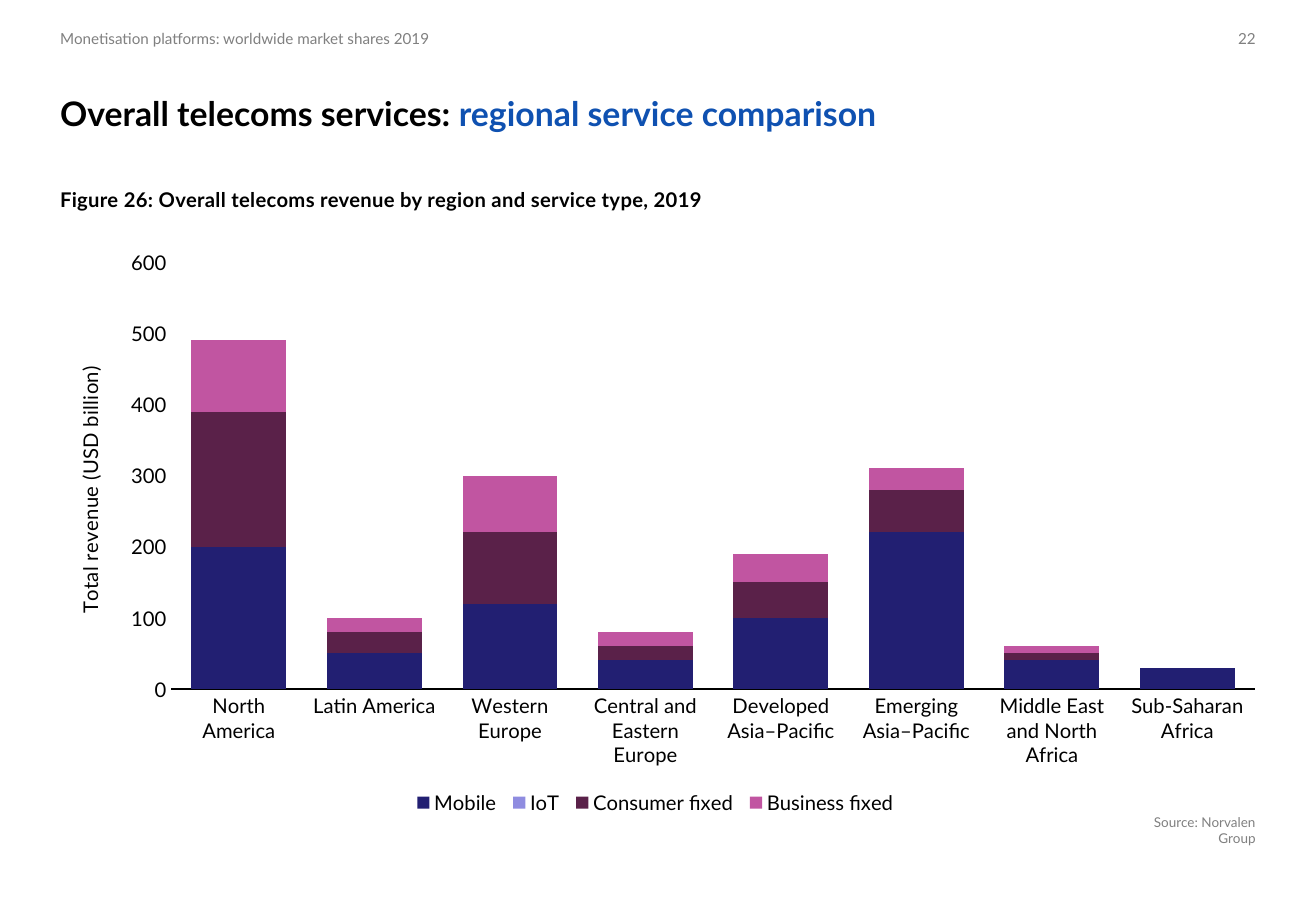
from lxml.etree import SubElement
from pptx import Presentation
from pptx.chart.data import CategoryChartData
from pptx.dml.color import RGBColor
from pptx.enum.chart import XL_CHART_TYPE, XL_LEGEND_POSITION, XL_TICK_MARK
from pptx.enum.text import MSO_ANCHOR, MSO_AUTO_SIZE, PP_ALIGN
from pptx.oxml import parse_xml
from pptx.oxml.ns import nsdecls, qn
from pptx.util import Pt

COLORS = {
    "black": "000000",
    "blue": "0F51B1",
    "grey": "808080",
    "Mobile": "221F72",
    "IoT": "8F8CE0",
    "Consumer fixed": "5A2149",
    "Business fixed": "C155A1",
}
REVENUE = {
    "Mobile": (200, 50, 120, 40, 100, 220, 40, 30),
    "IoT": (0, 0, 0, 0, 0, 0, 0, 0),
    "Consumer fixed": (190, 30, 100, 20, 50, 60, 10, 0),
    "Business fixed": (100, 20, 80, 20, 40, 30, 10, 0),
}
REGIONS = [
    "North America",
    "Latin America",
    "Western Europe",
    "Central and Eastern Europe",
    "Developed\nAsia–Pacific",
    "Emerging\nAsia–Pacific",
    "Middle East and North Africa",
    "Sub-Saharan Africa",
]


def format_font(font, size, color="black", bold=False):
    for name, value in {"name": "Lato", "size": Pt(size), "bold": bold}.items():
        setattr(font, name, value)
    font.color.rgb = RGBColor.from_string(COLORS[color])


def fill_box(box, spans, size, bold=False, align=PP_ALIGN.LEFT,
             anchor=MSO_ANCHOR.MIDDLE, inset=3.6, wrap=True):
    frame = box.text_frame
    settings = {
        "margin_left": 0, "margin_right": 0,
        "margin_top": Pt(inset), "margin_bottom": Pt(inset),
        "word_wrap": wrap, "auto_size": MSO_AUTO_SIZE.NONE,
        "vertical_anchor": anchor,
    }
    for name, value in settings.items():
        setattr(frame, name, value)
    para = frame.paragraphs[0]
    para.alignment = align
    for text, color in spans:
        span = para.add_run()
        span.text = text
        format_font(span.font, size, color, bold)
    return para


deck = Presentation()
deck.slide_width, deck.slide_height = Pt(780), Pt(540)
page = deck.slides.add_slide(deck.slide_layouts[5])

title = page.shapes.title
title.left, title.top, title.width, title.height = Pt(35.6), Pt(36.7), Pt(708.6), Pt(60)
title_para = fill_box(title, [("Overall telecoms services: ", "black"),
                              ("regional service comparison", "blue")], 20, bold=True)
title_para.line_spacing = Pt(25)

header = page.shapes.add_textbox(Pt(35.7), Pt(11.5), Pt(232.5), Pt(22.5))
fill_box(header, [("Monetisation platforms: worldwide market shares 2019", "grey")], 9, wrap=False)

number = page.shapes.add_textbox(Pt(690.3), Pt(11.5), Pt(54), Pt(22.5))
fill_box(number, [("22", "grey")], 9, align=PP_ALIGN.RIGHT)

caption = page.shapes.add_textbox(Pt(35.6), Pt(107.3), Pt(708.6), Pt(20))
caption_para = fill_box(
    caption, [("Figure 26: Overall telecoms revenue by region and service type, 2019", "black")],
    12, bold=True, anchor=MSO_ANCHOR.TOP)
caption_para.runs[0].font._element.set("spc", "20")

chart_data = CategoryChartData(number_format="#,##0")
chart_data.categories = REGIONS
for service, values in REVENUE.items():
    chart_data.add_series(service, values)
chart = page.shapes.add_chart(XL_CHART_TYPE.COLUMN_STACKED, Pt(20.5), Pt(132),
                              Pt(736), Pt(360), chart_data).chart
format_font(chart.font, 10)
chart.has_title = False
chart.has_legend = True
chart.legend.position = XL_LEGEND_POSITION.BOTTOM
chart.legend.include_in_layout = False
format_font(chart.legend.font, 12)

plot = chart.plots[0]
plot.gap_width, plot.overlap, plot.vary_by_categories = 43, 100, False
for series in plot.series:
    series.format.fill.solid()
    series.format.fill.fore_color.rgb = RGBColor.from_string(COLORS[series.name])

for axis in (chart.category_axis, chart.value_axis):
    axis.major_tick_mark = axis.minor_tick_mark = XL_TICK_MARK.NONE
    axis.has_major_gridlines = False
    format_font(axis.tick_labels.font, 12)
category_line = chart.category_axis.format.line
category_line.color.rgb = RGBColor.from_string(COLORS["black"])
category_line.width = Pt(1)

value_axis = chart.value_axis
value_axis.minimum_scale, value_axis.maximum_scale, value_axis.major_unit = 0, 600, 100
value_axis.format.line.fill.background()
value_axis.tick_labels.number_format = "#,##0"
value_axis.tick_labels.number_format_is_linked = False
axis_frame = value_axis.axis_title.text_frame
axis_frame.text = "Total revenue (USD billion)"
axis_font = axis_frame.paragraphs[0].runs[0].font
format_font(axis_font, 12)
axis_font._element.set("spc", "20")

edges = {"xMode": "edge", "yMode": "edge"}
placements = (
    (chart._chartSpace.chart.plotArea, "c:layout",
     {"layoutTarget": "inner", **edges, "x": 0.11, "y": 0.065, "w": 0.873, "h": 0.703}),
    (chart.legend._element, "c:legendPos",
     {**edges, "x": 0.3, "y": 0.93, "w": 0.4, "h": 0.05}),
    (value_axis.axis_title._element, "c:tx", {**edges, "x": 0.03, "y": 0.23}),
)
for parent, neighbour, placement in placements:
    layout = parent.find(qn("c:layout"))
    if layout is None:
        layout = parse_xml(f"<c:layout {nsdecls('c')}/>")
        before = parent.find(qn(neighbour))
        parent.insert(0 if before is None else parent.index(before) + 1, layout)
    manual = SubElement(layout, qn("c:manualLayout"))
    for tag, value in placement.items():
        SubElement(manual, qn(f"c:{tag}")).set("val", str(value))

source = page.shapes.add_textbox(Pt(674.3), Pt(482.4), Pt(70), Pt(20))
fill_box(source, [("Source: Norvalen Group", "grey")], 8, align=PP_ALIGN.RIGHT,
         anchor=MSO_ANCHOR.TOP, inset=0)

deck.save("out.pptx")
